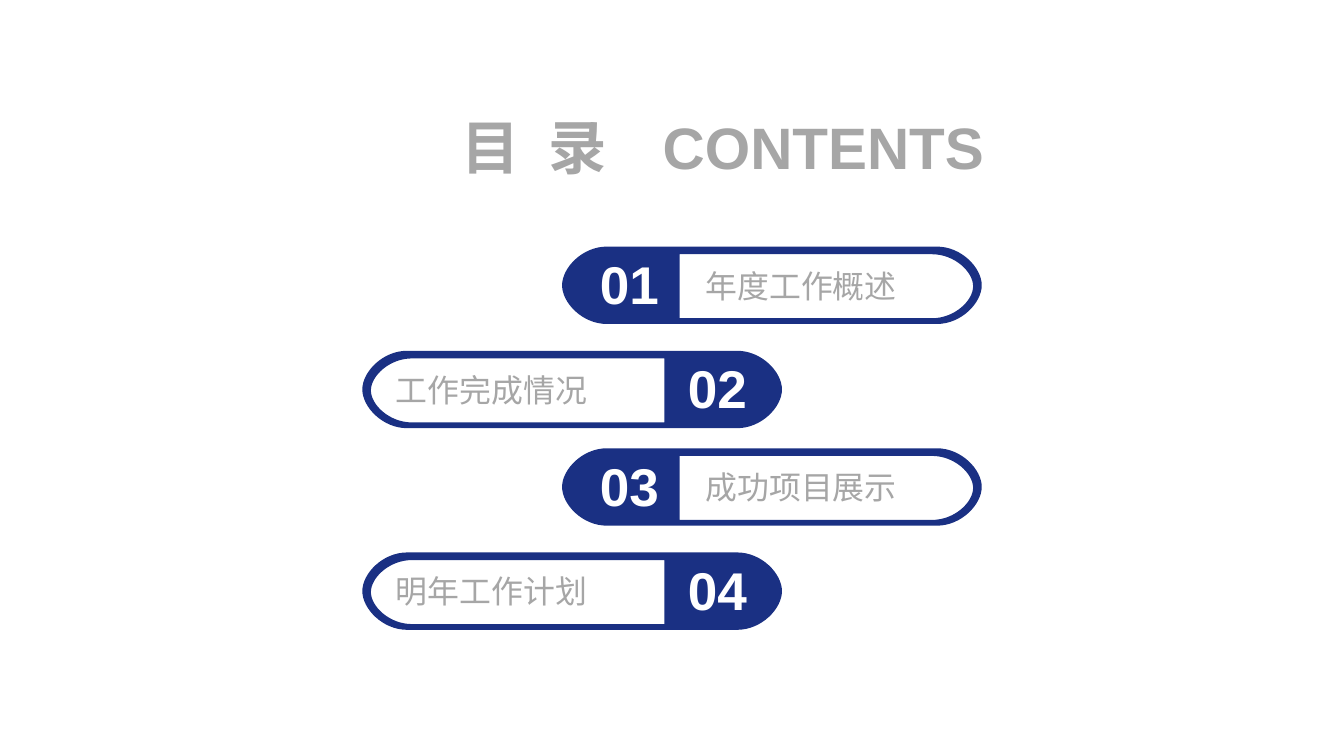
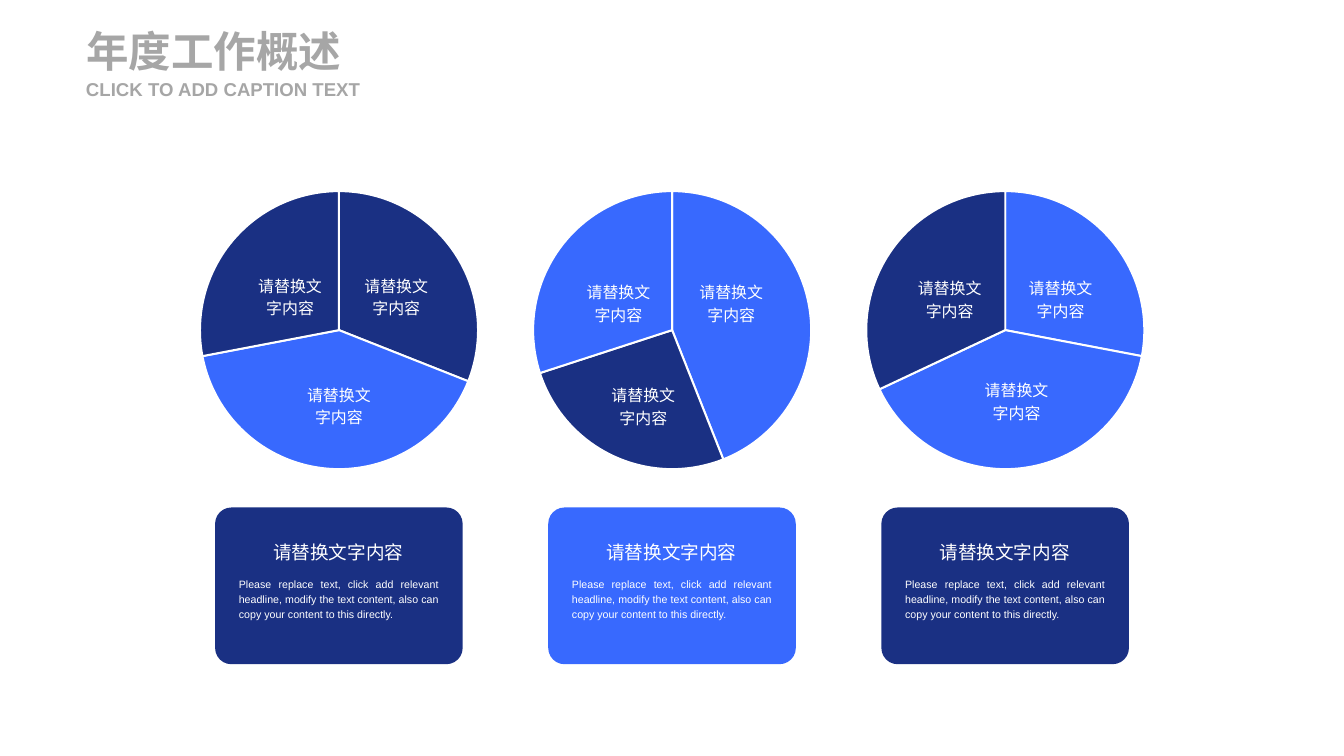
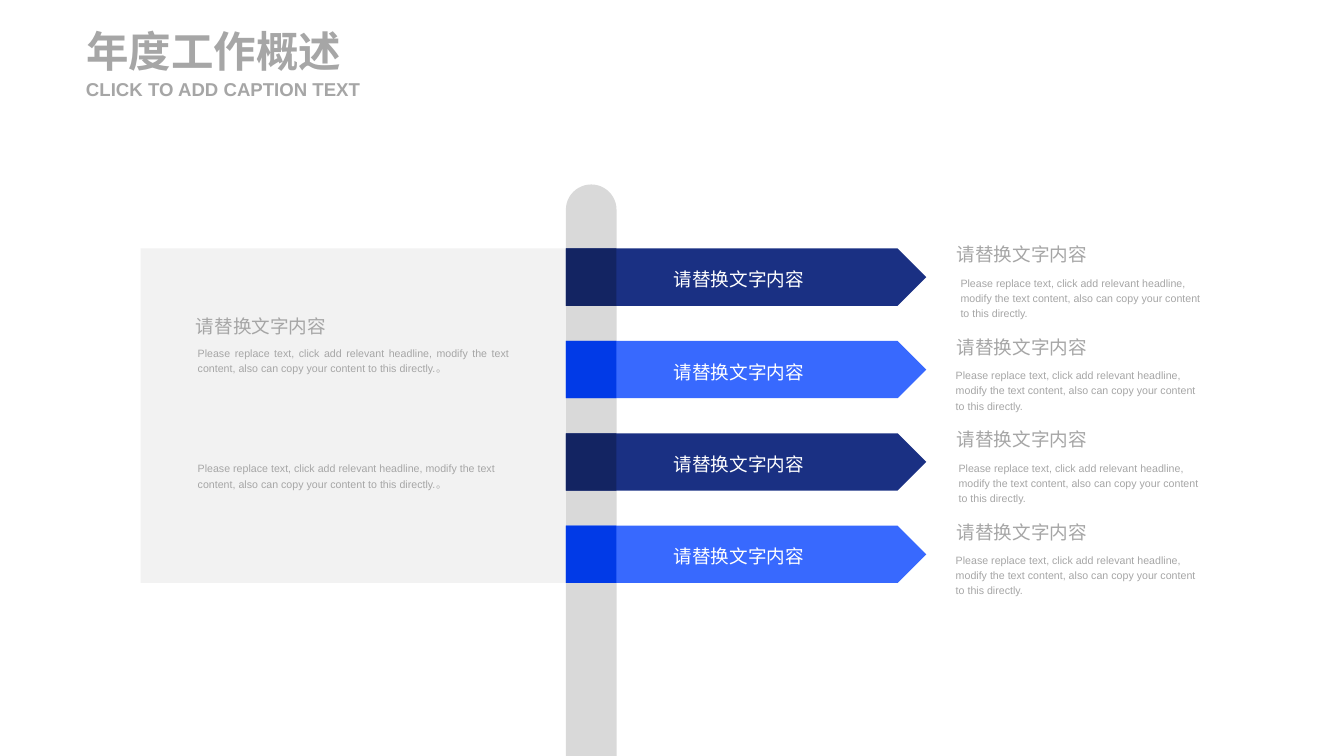
from lxml import etree
from pptx import Presentation
from pptx import util as u
from pptx.chart.data import CategoryChartData
from pptx.dml.color import RGBColor
from pptx.enum import chart as charts, shapes, text
from pptx.oxml import parse_xml
from pptx.oxml.ns import nsdecls, qn

NAVY, BLUE = RGBColor(0x1A, 0x30, 0x83), RGBColor(0x38, 0x69, 0xFE)
DARK_NAVY, DARK_BLUE = RGBColor(0x13, 0x24, 0x62), RGBColor(0x01, 0x3A, 0xE7)
GREY, RAIL_GREY = RGBColor(0xA6, 0xA6, 0xA6), RGBColor(0xD9, 0xD9, 0xD9)
PANEL_GREY = RGBColor(0xF2, 0xF2, 0xF2)
WHITE, BLACK = RGBColor(255, 255, 255), RGBColor(0, 0, 0)
FONT = "Arial"
LEFT, CENTER, JUSTIFY = text.PP_ALIGN.LEFT, text.PP_ALIGN.CENTER, text.PP_ALIGN.JUSTIFY
MIDDLE = text.MSO_ANCHOR.MIDDLE
GROW = text.MSO_AUTO_SIZE.SHAPE_TO_FIT_TEXT
SHAPE = shapes.MSO_SHAPE

WIDTH, HEIGHT = 14.06, 7.91
SECTION = "年度工作概述"
CAPTION = "CLICK TO ADD CAPTION TEXT"
HEADING = "请替换文字内容"
BODY = ("Please replace text, click add relevant headline, modify the text content, "
        "also can copy your content to this directly.")

# number, entry, top
CONTENTS = [
    ("01", SECTION, 2.58),
    ("02", "工作完成情况", 3.67),
    ("03", "成功项目展示", 4.69),
    ("04", "明年工作计划", 5.78),
]
# Label positions are measured from the top left corner of the chart
PIES = [
    {"values": (31, 41, 28, None), "colors": (NAVY, BLUE, NAVY, BLUE), "card": NAVY,
     "labels": [(0.86, 0.94), (1.97, 0.94), (1.37, 2.08)]},
    {"values": (44, 26, 30, None), "colors": (BLUE, NAVY, BLUE, BLUE), "card": BLUE,
     "labels": [(1.99, 1.01), (0.81, 1.01), (1.07, 2.09)]},
    {"values": (28, 40, 32, None), "colors": (BLUE, BLUE, NAVY, BLUE), "card": NAVY,
     "labels": [(0.79, 0.97), (1.95, 0.97), (1.49, 2.03)]},
]
# arrow colour, colour where it crosses the rail, indent of the body text
SIGNS = [
    (NAVY, DARK_NAVY, 0.05),
    (BLUE, DARK_BLUE, 0),
    (NAVY, DARK_NAVY, 0.03),
    (BLUE, DARK_BLUE, 0),
]


def inches(*lengths):
    return [u.Inches(length) for length in lengths]


def write(shape, words, size, color, align=LEFT, bold=False, spacing=None, **frame_format):
    """Fill a shape with one formatted paragraph; extra values go to its text frame."""
    frame = shape.text_frame
    for name, value in {"word_wrap": True, **frame_format}.items():
        setattr(frame, name, value)
    paragraph = frame.paragraphs[0]
    paragraph.alignment = align
    if spacing:
        paragraph.line_spacing = spacing
    run = paragraph.add_run()
    run.text = words
    for name, value in {"name": FONT, "size": u.Pt(size), "bold": bold}.items():
        setattr(run.font, name, value)
    run.font.color.rgb = color
    return run


def margins(left=0):
    return {"margin_left": u.Inches(left), "margin_top": 0, "margin_right": 0, "margin_bottom": 0}


def add_text(slide, box, words, size, color, **options):
    shape = slide.shapes.add_textbox(*inches(*box))
    write(shape, words, size, color, auto_size=GROW, **options)


def add_copy(slide, box, words, size, color, **options):
    add_text(slide, box, words, size, color, spacing=1.2, **options)


def paint(shape, color):
    shape.shadow.inherit = False
    shape.fill.solid()
    shape.fill.fore_color.rgb = color
    shape.line.fill.background()


def add_block(slide, kind, box, color, adjustments=()):
    shape = slide.shapes.add_shape(kind, *inches(*box))
    paint(shape, color)
    for index, value in enumerate(adjustments):
        shape.adjustments[index] = value
    return shape


def new_slide(presentation, title, box, size, align=LEFT):
    slide = presentation.slides.add_slide(presentation.slide_layouts[5])
    placeholder = slide.shapes.title
    placeholder.left, placeholder.top, placeholder.width, placeholder.height = inches(*box)
    run = write(placeholder, title, size, GREY, align=align, bold=True,
                auto_size=GROW, vertical_anchor=MIDDLE, **margins())
    return slide, run


def section_slide(presentation):
    slide, _ = new_slide(presentation, SECTION, (0.9, 0.26, 3.07, 0.54), 32)
    add_text(slide, (0.9, 0.81, 3.07, 0.24), CAPTION, 14, GREY, bold=True,
             vertical_anchor=MIDDLE, **margins())
    return slide


def round_end(edge, radius, top, bottom):
    """Control points of two curves from the top over the edge to the bottom."""
    middle, pull = (top + bottom) / 2, 0.45
    start, rise = edge - radius, (bottom - top) / 2 * pull
    near = edge - radius * pull
    return [(near, top), (edge, middle - rise), (edge, middle),
            (edge, middle + rise), (near, bottom), (start, bottom)]


def bend(pill, commands):
    """Join each three line segments marked C into one Bézier curve."""
    segments = iter(pill._element.findall(".//" + qn("a:lnTo")))
    for command in commands:
        first = next(segments)
        if command == "C":
            curve = etree.Element(qn("a:cubicBezTo"))
            first.addprevious(curve)
            for segment in (first, next(segments), next(segments)):
                curve.append(segment[0])
                segment.getparent().remove(segment)


def add_pill(slide, left, top, mirrored):
    """A capsule with a window that is square on the side of the number."""
    width, height, radius = 4.39, 0.81, 0.47
    right_end = round_end(width, radius, 0, height)
    left_end = [(width - x, height - y) for x, y in right_end]
    outline = [(radius, 0), (width - radius, 0), *right_end, (radius, height), *left_end]
    window = [(1.23, 0.75), (1.23, 0.08), (3.87, 0.08), *round_end(4.3, 0.43, 0.08, 0.75)]

    def place(points):
        return [tuple(inches(left + (width - x if mirrored else x), top + y))
                for x, y in points]

    outline, window = place(outline), place(window)
    builder = slide.shapes.build_freeform(*outline[0], scale=1.0)
    builder.add_line_segments(outline[1:-1] + outline[:1], close=False)
    builder.move_to(*window[0])
    builder.add_line_segments(window[1:], close=True)
    pill = builder.convert_to_shape()
    bend(pill, "LCCLCC" + "LLCC")
    paint(pill, NAVY)
    return pill


def add_pie(slide, left, top, pie):
    width, height, diameter = 3.69, 3.19, 2.91
    data = CategoryChartData()
    data.categories = ["1", "2", "3", "4"]
    data.add_series("Series 1", pie["values"])
    chart = slide.shapes.add_chart(charts.XL_CHART_TYPE.PIE,
                                   *inches(left, top, width, height), data).chart
    chart.has_title = chart.has_legend = False
    chart.font.name, chart.font.size = FONT, u.Pt(10)
    chart.font.color.rgb = BLACK
    plot = chart.plots[0]
    plot.vary_by_categories = True
    for index, color in enumerate(pie["colors"]):
        slice_format = plot.series[0].points[index].format
        slice_format.fill.solid()
        slice_format.fill.fore_color.rgb = color
        slice_format.line.color.rgb = WHITE
        slice_format.line.width = u.Pt(1.5)

    share_x, share_y = diameter / width, diameter / height
    places = {"x": (1 - share_x) / 2, "y": (1 - share_y) / 2, "w": share_x, "h": share_y}
    modes = '<c:layoutTarget val="inner"/><c:xMode val="edge"/><c:yMode val="edge"/>'
    values = "".join(f'<c:{name} val="{value:.3f}"/>' for name, value in places.items())
    plot_area = chart._chartSpace.chart.plotArea
    for layout in plot_area.findall("{*}layout"):
        plot_area.remove(layout)
    plot_area.insert(0, parse_xml(f'<c:layout {nsdecls("c")}><c:manualLayout>{modes}{values}'
                                  '</c:manualLayout></c:layout>'))


def contents_slide(presentation):
    slide, run = new_slide(presentation, "目 录", (4.67, 1.16, 1.84, 0.74), 44, CENTER)
    run.font._element.set("spc", "550")
    add_text(slide, (6.88, 1.16, 3.47, 0.74), "CONTENTS", 44, GREY,
             align=CENTER, bold=True, **margins())
    for index, (number, entry, top) in enumerate(CONTENTS):
        mirrored = index % 2 == 1
        left, number_left, indent = (3.79, 7.04, 0.35) if mirrored else (5.88, 6.12, 1.5)
        pill = add_pill(slide, left, top, mirrored)
        write(pill, entry, 24, GREY, vertical_anchor=MIDDLE, **margins(indent))
        add_text(slide, (number_left, top + 0.05, 0.93, 0.67), number, 40, WHITE,
                 align=CENTER, bold=True, **margins())


def pies_slide(presentation):
    slide = section_slide(presentation)
    first_card, last_card, chart_top = 2.25, 9.22, 1.86
    pitch = (last_card - first_card) / (len(PIES) - 1)
    for column, pie in enumerate(PIES):
        card_left = first_card + column * pitch
        chart_left = card_left - 0.55
        add_pie(slide, chart_left, chart_top, pie)
        for x, y in pie["labels"]:
            add_copy(slide, (chart_left + x, chart_top + y, 0.95, 0.59), HEADING, 12, WHITE,
                     align=CENTER)
        add_block(slide, SHAPE.ROUNDED_RECTANGLE, (card_left, 5.31, 2.59, 1.64),
                  pie["card"], [0.104])
        add_copy(slide, (card_left + 0.15, 5.97, 2.29, 0.57), BODY, 8, WHITE, align=JUSTIFY)
        add_copy(slide, (card_left + 0.5, 5.56, 1.58, 0.36), HEADING, 14, WHITE,
                 align=CENTER, word_wrap=False)


def signpost_slide(presentation):
    slide = section_slide(presentation)
    rail_left, rail_width, rail_top = 5.92, 0.53, 1.93
    first_top, last_top, sign_height = 2.6, 5.5, 0.6
    pitch = (last_top - first_top) / (len(SIGNS) - 1)
    add_block(slide, SHAPE.ROUND_2_SAME_RECTANGLE,
              (rail_left, rail_top, rail_width, HEIGHT - rail_top), RAIL_GREY, [0.5, 0])
    add_block(slide, SHAPE.RECTANGLE, (1.47, first_top, rail_left - 1.47, 3.5), PANEL_GREY)
    add_copy(slide, (1.95, 3.2, 1.68, 0.36), HEADING, 14, GREY)
    for top, align in [(3.55, JUSTIFY), (4.76, LEFT)]:
        add_copy(slide, (1.97, top, 3.46, 0.41), BODY + "。", 8, GREY, align=align)
    for row, (color, crossing, indent) in enumerate(SIGNS):
        top = first_top + row * pitch
        sign = add_block(slide, SHAPE.PENTAGON, (rail_left, top, 3.77, sign_height), color)
        write(sign, HEADING, 14, WHITE, align=CENTER, spacing=1.2, vertical_anchor=MIDDLE)
        add_block(slide, SHAPE.RECTANGLE, (rail_left, top, rail_width, sign_height), crossing)
        add_copy(slide, (9.91, top - 0.15, 1.58, 0.36), HEADING, 14, GREY, word_wrap=False)
        add_copy(slide, (9.9 + indent, top + 0.22, 2.73, 0.57), BODY, 8, GREY)


def main():
    presentation = Presentation()
    presentation.slide_width, presentation.slide_height = inches(WIDTH, HEIGHT)
    for build in (contents_slide, pies_slide, signpost_slide):
        build(presentation)
    presentation.save("out.pptx")


if __name__ == "__main__":
    main()
